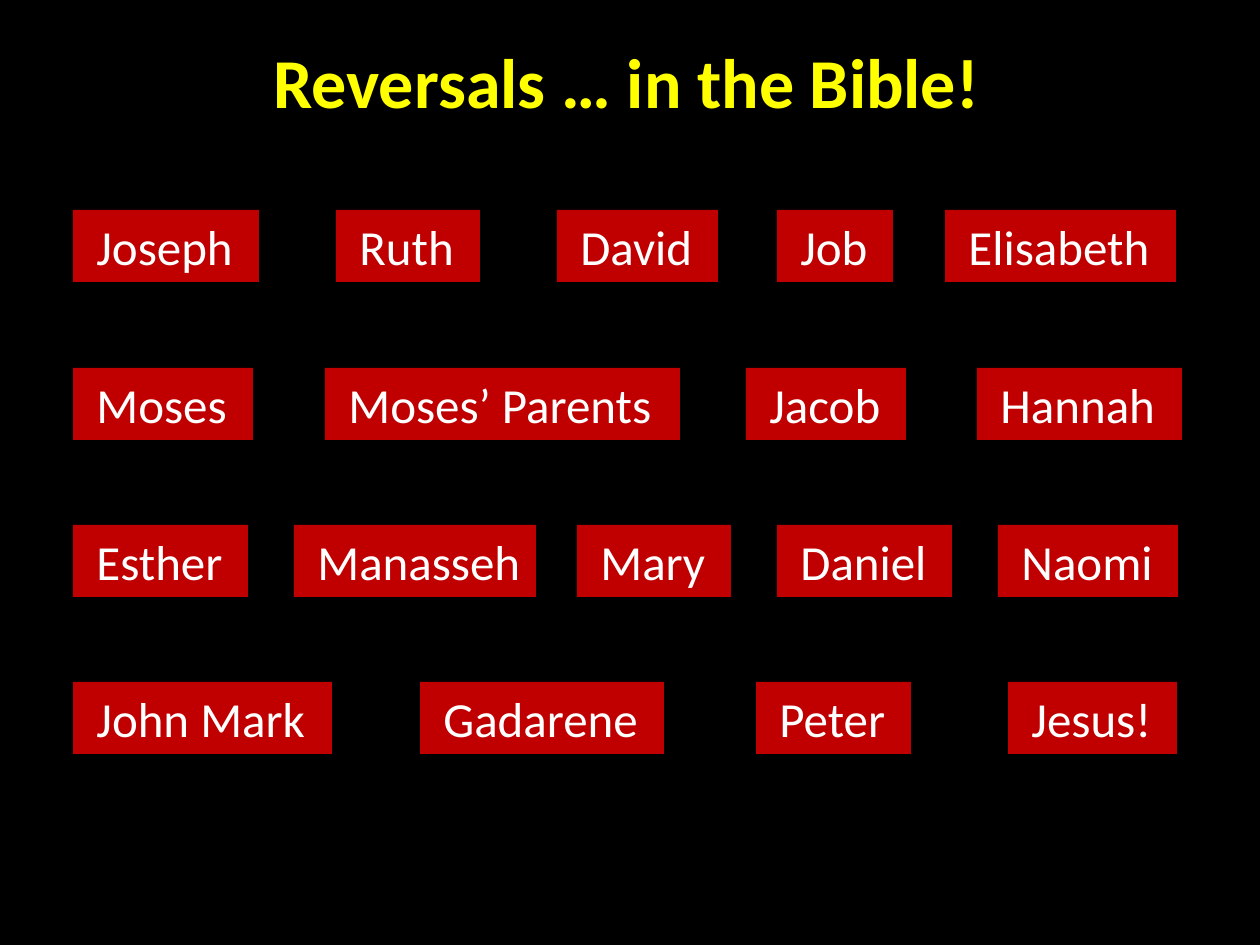
from pptx import Presentation
from pptx.dml.color import RGBColor
from pptx.enum.text import MSO_AUTO_SIZE, PP_ALIGN
from pptx.util import Emu, Pt

PX_PER_INCH = 126
FIRST_ROW_TOP = 210
ROW_PITCH = 157.5
LABEL_HEIGHT = 72

# Each label: name, left, width
NAME_ROWS = [
    [("Joseph", 73, 186), ("Ruth", 336, 144), ("David", 557, 161),
     ("Job", 777, 116), ("Elisabeth", 945, 231)],
    [("Moses", 73, 180), ("Moses’ Parents", 325, 355),
     ("Jacob", 746, 160), ("Hannah", 977, 205)],
    [("Esther", 73, 175), ("Manasseh", 294, 242), ("Mary", 577, 154),
     ("Daniel", 777, 175), ("Naomi", 998, 180)],
    [("John Mark", 73, 259), ("Gadarene", 420, 244),
     ("Peter", 756, 155), ("Jesus!", 1008, 169)],
]


def px(length):
    return Emu(round(length * 914400 / PX_PER_INCH))


def color(hex_value):
    return RGBColor.from_string(hex_value)


def add_text(slide, text, left, top, width, height, *, size, font_color,
             bold=False, fill=None, align=PP_ALIGN.LEFT):
    box = slide.shapes.add_textbox(px(left), px(top), px(width), px(height))
    if fill:
        box.fill.solid()
        box.fill.fore_color.rgb = color(fill)
    frame = box.text_frame
    frame.word_wrap = False
    frame.auto_size = MSO_AUTO_SIZE.SHAPE_TO_FIT_TEXT
    paragraph = frame.paragraphs[0]
    paragraph.alignment = align
    run = paragraph.add_run()
    run.text = text
    run.font.name = "Calibri"
    run.font.size = Pt(size)
    run.font.bold = bold
    run.font.color.rgb = color(font_color)


def add_name_rows(slide):
    for row, labels in enumerate(NAME_ROWS):
        top = round(FIRST_ROW_TOP + row * ROW_PITCH)
        for name, left, width in labels:
            add_text(slide, f" {name}", left, top, width, LABEL_HEIGHT,
                     size=28, font_color="FFFFFF", fill="C00000")


def main():
    presentation = Presentation()
    presentation.slide_width = px(1260)
    presentation.slide_height = px(945)
    slide = presentation.slides.add_slide(presentation.slide_layouts[6])
    slide.background.fill.solid()
    slide.background.fill.fore_color.rgb = color("000000")

    add_text(slide, "Reversals … in the Bible!", 261, 32, 740, 97,
             size=40, font_color="FFFF00", bold=True)
    add_name_rows(slide)
    presentation.save("out.pptx")


if __name__ == "__main__":
    main()
